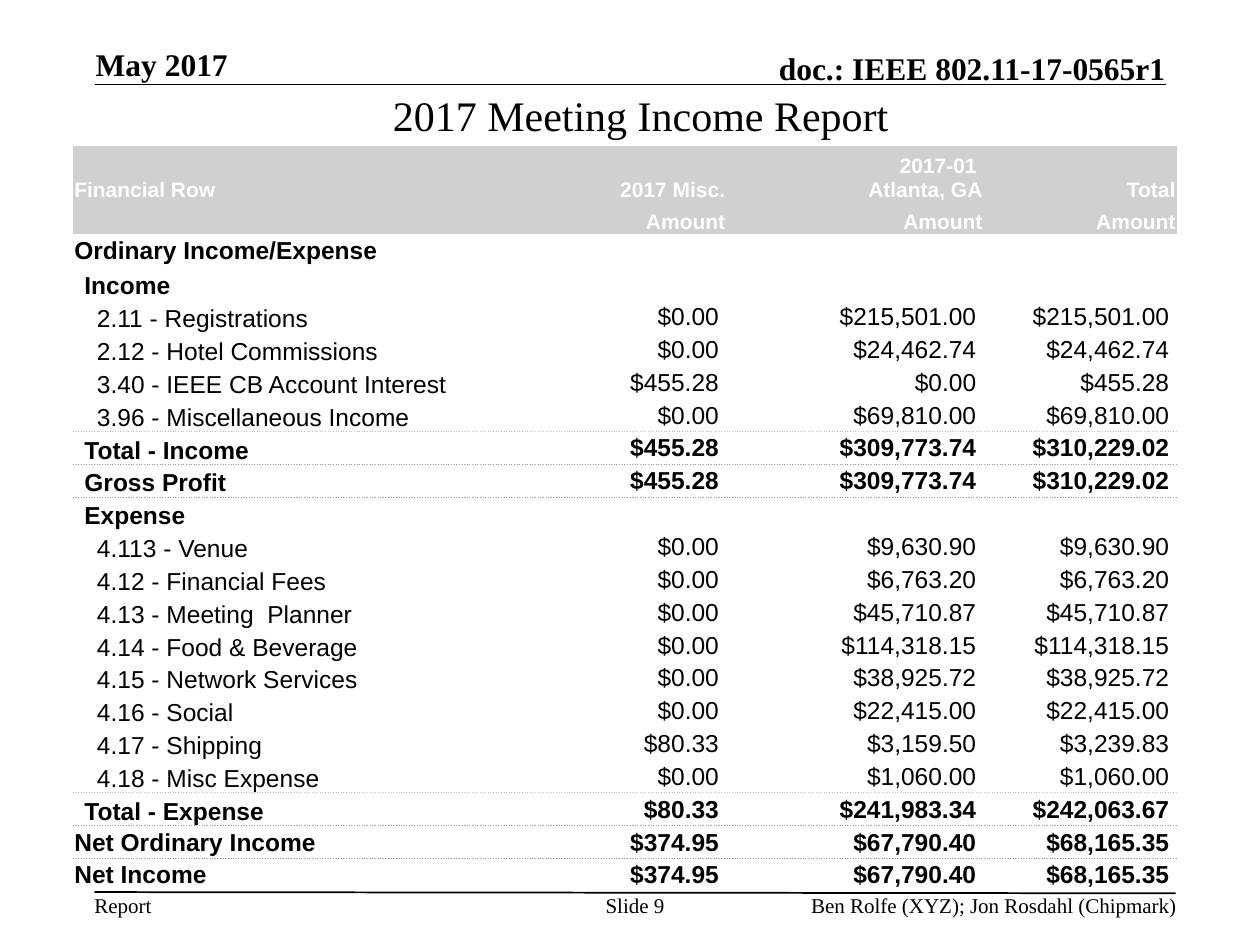
from lxml.etree import SubElement
from pptx import Presentation
from pptx.dml.color import RGBColor
from pptx.enum.shapes import MSO_CONNECTOR
from pptx.enum.text import MSO_ANCHOR, PP_ALIGN
from pptx.oxml import parse_xml
from pptx.oxml.ns import nsdecls, qn
from pptx.util import Inches, Pt

INK = {"black": "000000", "white": "FFFFFF", "head": "D0D0D0",
       "light": "C0C0C0", "dark": "969696"}
SERIF, SANS = "Times New Roman", "Arial"
LEFT, MID, RIGHT = PP_ALIGN.LEFT, PP_ALIGN.CENTER, PP_ALIGN.RIGHT
PLAIN = "{2D5ABB26-0587-4C30-8999-92F81FD0307C}"
COLS = [3.8, 1.38, 2.04, 1.53]
HEADS = [["Financial Row", "2017 Misc.", "2017-01 \vAtlanta, GA", "Total"],
         ["", "Amount", "Amount", "Amount"]]
ROWS = [
    (0, "Ordinary Income/Expense"),
    (1, "Income"),
    (2, "2.11 - Registrations", 0, 215501),
    (2, "2.12 - Hotel Commissions", 0, 24462.74),
    (2, "3.40 - IEEE CB Account Interest", 455.28, 0),
    (2, "3.96 - Miscellaneous Income", 0, 69810),
    (1, "Total - Income", 455.28, 309773.74),
    (1, "Gross Profit", 455.28, 309773.74),
    (1, "Expense"),
    (2, "4.113 - Venue", 0, 9630.9),
    (2, "4.12 - Financial Fees", 0, 6763.2),
    (2, "4.13 - Meeting  Planner", 0, 45710.87),
    (2, "4.14 - Food & Beverage", 0, 114318.15),
    (2, "4.15 - Network Services", 0, 38925.72),
    (2, "4.16 - Social", 0, 22415),
    (2, "4.17 - Shipping", 80.33, 3159.5),
    (2, "4.18 - Misc Expense", 0, 1060),
    (1, "Total - Expense", 80.33, 241983.34),
    (0, "Net Ordinary Income", 374.95, 67790.4),
    (0, "Net Income", 374.95, 67790.4),
]
INDENTS = [0.01, 0.09, 0.19]
RULES = {7: "light", 8: "dark", 18: "light", 19: "dark", 20: "dark"}


def style(para, face, size, color, bold, align):
    """Format a paragraph and its runs."""
    para.alignment = align
    for run in para.runs:
        font = run.font
        font.name, font.size, font.bold = face, Pt(size), bold
        font.color.rgb = RGBColor.from_string(INK[color])


def label(slide, box, text, size, align=LEFT, bold=False,
          anchor=MSO_ANCHOR.TOP, inset=(0, 0), wrap=True):
    """Place a serif text box."""
    frame = slide.shapes.add_textbox(*map(Inches, box)).text_frame
    frame.word_wrap = wrap
    frame.vertical_anchor = anchor
    frame.margin_left = frame.margin_right = Inches(inset[0])
    frame.margin_top = frame.margin_bottom = Inches(inset[1])
    frame.text = text
    style(frame.paragraphs[0], SERIF, size, "black", bold, align)


def rule(slide, x, y, end_x, end_y):
    """Draw a thin black line."""
    line = slide.shapes.add_connector(
        MSO_CONNECTOR.STRAIGHT, *map(Inches, (x, y, end_x, end_y)))
    line.line.width = Pt(1)
    line.line.color.rgb = RGBColor.from_string(INK["black"])
    SubElement(line._element.spPr, qn("a:effectLst"))


def header(slide, x, y, w, h):
    """Place the date and document number over a line."""
    rule(slide, x, y + h, x + w, y + h)
    label(slide, (x + w - 5.33, y + 0.03, 5.33, 0.3),
          "doc.: IEEE 802.11-17-0565r1", 18, RIGHT, True, MSO_ANCHOR.BOTTOM)
    label(slide, (x + 0.01, y, 2.05, 0.3), "May 2017", 18, LEFT, True,
          MSO_ANCHOR.BOTTOM)


def footer(slide, x, y, w, h):
    """Place the report name, slide number and authors under a line."""
    rule(slide, x, y, x + w, y + 0.01)
    label(slide, (x, y, 0.46, h), "Report", 12, wrap=False)
    label(slide, (x + w - 3.33, y, 3.34, h),
          "Ben Rolfe (XYZ); Jon Rosdahl (Chipmark)", 12, RIGHT)
    label(slide, (x + 4, y, 0.58, 2 * h), "Slide 9", 12, MID)


def border(cell, side, color):
    """Give one side of a cell a dotted line."""
    cell._tc.get_or_add_tcPr().append(parse_xml(
        f'<a:{side} {nsdecls("a")} w="6350"><a:solidFill>'
        f'<a:srgbClr val="{INK[color]}"/></a:solidFill>'
        f'<a:prstDash val="dot"/></a:{side}>'))


def fill(cell, text, size, color, bold, align, anchor, left, right):
    """Write and format one table cell."""
    cell.margin_left, cell.margin_right = Inches(left), Inches(right)
    cell.margin_top, cell.margin_bottom = Inches(0.01), 0
    cell.vertical_anchor = anchor
    para = cell.text_frame.paragraphs[0]
    if text:
        para.text = text
        style(para, SANS, size, color, bold, align)
    else:
        SubElement(para._p, qn("a:endParaRPr"), sz=str(size * 100))


def report(slide, x, y, w, h):
    """Build the income table."""
    count = len(HEADS) + len(ROWS)
    table = slide.shapes.add_table(
        count, len(COLS), *map(Inches, (x, y, w, h))).table
    table.first_row = table.horz_banding = False
    table._tbl.tblPr.find(qn("a:tableStyleId")).text = PLAIN
    for col, width in zip(table.columns, COLS):
        col.width = Inches(width * w / sum(COLS))
    for i, row in enumerate(table.rows):
        row.height = Inches((h - 0.44) / (count - 1) if i else 0.44)
        for cell in row.cells:
            if i - 1 in RULES:
                border(cell, "lnT", RULES[i - 1])
            if i in RULES:
                border(cell, "lnB", RULES[i])
            if i < len(HEADS):
                cell.fill.solid()
                cell.fill.fore_color.rgb = RGBColor.from_string(INK["head"])
            else:
                cell.fill.background()
    for i, texts in enumerate(HEADS):
        for j, text in enumerate(texts):
            fill(table.cell(i, j), text, 12, "white", True,
                 RIGHT if j else LEFT, MSO_ANCHOR.BOTTOM, 0.01, 0.01)
    for i, (level, name, *sums) in enumerate(ROWS, len(HEADS)):
        bold = level < 2
        fill(table.cell(i, 0), name, 14, "black", bold, LEFT,
             MSO_ANCHOR.BOTTOM if level else MSO_ANCHOR.MIDDLE,
             INDENTS[level], 0.01)
        texts = [f"${n:,.2f}" for n in (*sums, sum(sums))] if sums else [""] * 3
        for j, text in enumerate(texts, 1):
            fill(table.cell(i, j), text, 14, "black", bold, RIGHT,
                 MSO_ANCHOR.MIDDLE, 0.01, 0.06)


def main():
    """Build and save the slide."""
    deck = Presentation()
    deck.slide_width, deck.slide_height = Inches(10), Inches(7.5)
    slide = deck.slides.add_slide(deck.slide_layouts[6])
    header(slide, 0.75, 0.36, 8.5, 0.31)
    footer(slide, 0.75, 7.08, 8.58, 0.2)
    label(slide, (0.83, 0.66, 8.51, 0.5), "2017 Meeting Income Report", 24,
          MID, inset=(0.1, 0.05))
    report(slide, 0.58, 1.16, 8.76, 5.92)
    deck.save("out.pptx")


if __name__ == "__main__":
    main()
